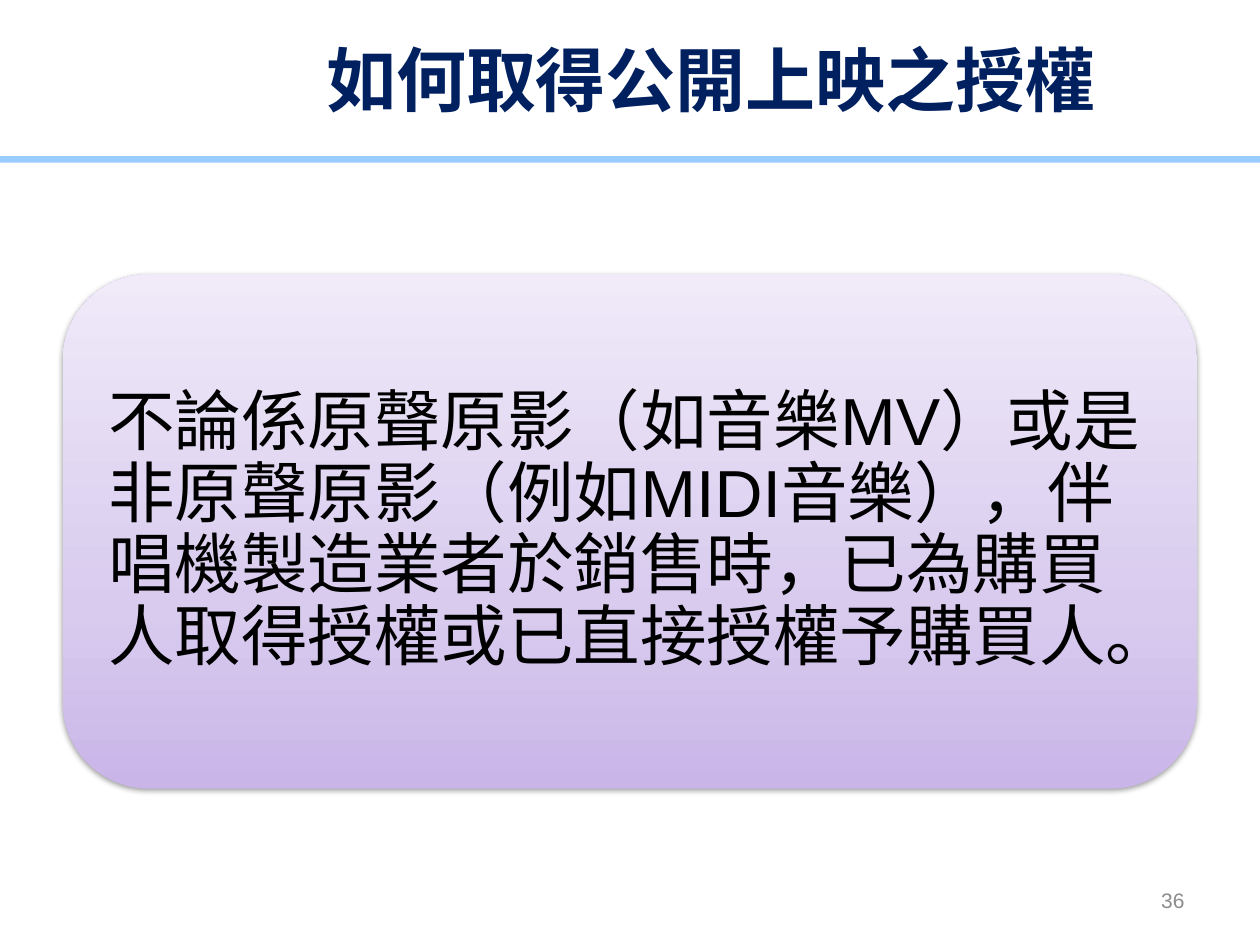
from lxml import etree
from pptx import Presentation
from pptx.dml.color import RGBColor
from pptx.enum import shapes, text
from pptx.oxml import parse_xml
from pptx.oxml.ns import qn
from pptx.util import Cm, Pt

NAVY = RGBColor(0x00, 0x20, 0x60)
SKY = RGBColor(0x99, 0xCC, 0xFF)
GREY = RGBColor(0x8C, 0x8C, 0x8C)
BLACK = RGBColor(0x00, 0x00, 0x00)
LILACS = [
    (0, RGBColor(0xC9, 0xB5, 0xE8)),
    (35, RGBColor(0xD8, 0xCB, 0xEE)),
    (100, RGBColor(0xF0, 0xEA, 0xF9)),
]
DRAWING = 'xmlns:a="http://schemas.openxmlformats.org/drawingml/2006/main"'


def write(box, words, color, align, **font):
    """Fill a box with one vertically centred, formatted paragraph."""
    frame = box.text_frame
    frame.word_wrap = True
    frame.auto_size = text.MSO_AUTO_SIZE.NONE
    frame.vertical_anchor = text.MSO_ANCHOR.MIDDLE
    para = frame.paragraphs[0]
    para.alignment = align
    span = para.add_run()
    span.text = words
    for name, value in font.items():
        setattr(span.font, name, value)
    span.font.color.rgb = color
    east_asian = etree.SubElement(span.font._element, qn("a:ea"))
    east_asian.set("typeface", font["name"])
    return para


def add_header(page, left, top, width, height):
    # Rule under the title
    rule = page.shapes.add_shape(
        shapes.MSO_SHAPE.RECTANGLE, Cm(-0.1), top + height - Cm(0.03), Cm(25.55), Cm(0.13))
    rule.shadow.inherit = False
    rule.fill.solid()
    rule.fill.fore_color.rgb = SKY
    rule.line.fill.background()

    # Title
    title = page.shapes.title
    place = {"left": left, "top": top, "width": width, "height": height}
    for name, value in place.items():
        setattr(title, name, value)
    write(title, "如何取得公開上映之授權", NAVY, text.PP_ALIGN.CENTER,
          name="Noto Sans CJK SC", size=Pt(40), bold=True)


def add_card(page, left, top, width, height):
    # Rounded panel with a three-stop gradient and a soft shadow
    panel = page.shapes.add_shape(
        shapes.MSO_SHAPE.ROUNDED_RECTANGLE, left, top, width, height)
    panel.line.fill.background()
    stops = "".join(
        f'<a:gs pos="{position * 1000}"><a:srgbClr val="{color}"/></a:gs>'
        for position, color in LILACS)
    gradient = parse_xml(
        f'<a:gradFill {DRAWING} rotWithShape="1"><a:gsLst>{stops}</a:gsLst>'
        '<a:lin ang="16200000" scaled="0"/></a:gradFill>')
    shadow = parse_xml(
        f'<a:effectLst {DRAWING}><a:outerShdw blurRad="{Pt(3.1)}" dist="{Pt(1.6)}" '
        'dir="5400000" rotWithShape="0"><a:srgbClr val="000000">'
        '<a:alpha val="38000"/></a:srgbClr></a:outerShdw></a:effectLst>')
    properties = panel._element.spPr
    properties.find(qn("a:prstGeom")).addnext(gradient)
    properties.append(shadow)

    # Statement inside the panel
    inset = Cm(0.5)
    box = page.shapes.add_textbox(
        left + inset, top + inset, width - 2 * inset, height - 2 * inset)
    for side in ("left", "top", "right", "bottom"):
        setattr(box.text_frame, f"margin_{side}", Cm(0.41))
    para = write(
        box,
        "不論係原聲原影（如音樂MV）或是非原聲原影（例如MIDI音樂），"
        "伴唱機製造業者於銷售時，已為購買人取得授權或已直接授權予購買人。",
        BLACK, text.PP_ALIGN.LEFT, name="Arial", size=Pt(38))
    para.line_spacing = 0.9


def add_page_number(page, left, top, width, height):
    box = page.shapes.add_textbox(left, top, width, height)
    write(box, "36", GREY, text.PP_ALIGN.RIGHT, name="Arial", size=Pt(12))


def main():
    deck = Presentation()
    deck.slide_width, deck.slide_height = Cm(25.4), Cm(19.05)
    page = deck.slides.add_slide(deck.slide_layouts[5])
    add_header(page, Cm(2.9), Cm(0), Cm(22.86), Cm(3.18))
    add_page_number(page, Cm(18.2), Cm(17.65), Cm(5.93), Cm(1.01))
    add_card(page, Cm(1.27), Cm(5.53), Cm(22.86), Cm(10.37))
    deck.save("out.pptx")


if __name__ == "__main__":
    main()
